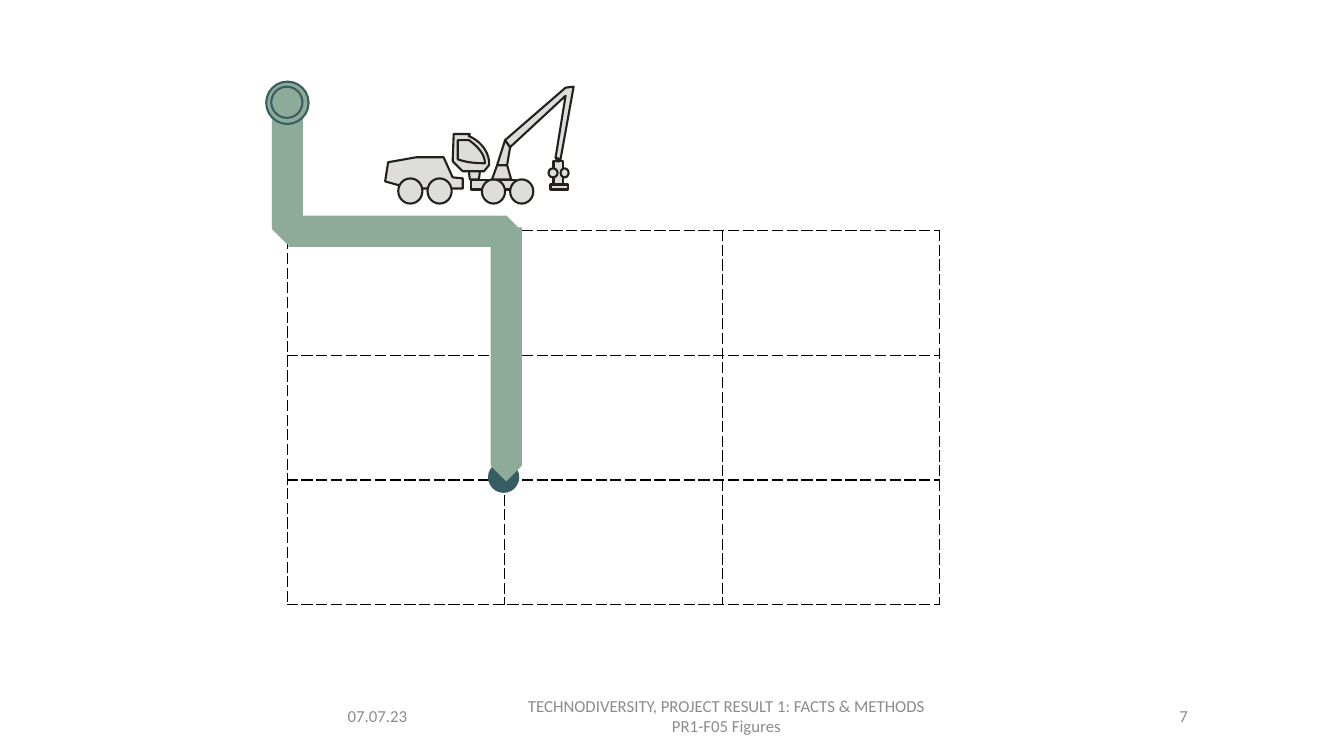
from lxml import etree
from pptx import Presentation
from pptx.dml.color import RGBColor
from pptx.enum.shapes import MSO_SHAPE
from pptx.enum.text import MSO_ANCHOR, PP_ALIGN
from pptx.oxml.ns import qn
from pptx.util import Inches, Pt

OVAL, RECTANGLE, PENTAGON = MSO_SHAPE.OVAL, MSO_SHAPE.RECTANGLE, MSO_SHAPE.PENTAGON
LEFT, CENTER, RIGHT = PP_ALIGN.LEFT, PP_ALIGN.CENTER, PP_ALIGN.RIGHT
MIDDLE = MSO_ANCHOR.MIDDLE

THEME = {
    "font": "Calibri",
    "footer_size": 12,
    "footer": "8C8C8C",
    "grid": "000000",
    "grid_width": 1,
    "target": "355D62",
    "route": "8EAB99",
    "ring": "395D61",
    "machine": "DDDDDC",
    "outline": "24211D",
    "outline_width": 1.5,
}
NO_STYLE = "{2D5ABB26-0587-4C30-8999-92F81FD0307C}"
CURVE_STEPS = 12

FOOTERS = [
    ((3.35, 6.9, 1.34, 0.4), LEFT, ["07.07.23"]),
    ((4.86, 6.9, 4.69, 0.4), CENTER,
     ["TECHNODIVERSITY, PROJECT RESULT 1: FACTS & METHODS", "PR1-F05 Figures"]),
    ((9.77, 6.9, 2.11, 0.4), RIGHT, ["7"]),
]
GRID_BOX = (2.85, 1.05, 6.47, 4.95)
GRID_ROWS, GRID_COLUMNS = 4, 3
TARGET = (4.84, 4.58, 0.31, 0.31)
ROUTE = [
    ((3.76, 3.36, 2.52, 0.31), 90),
    ((2.86, 2.14, 2.32, 0.31), 0),
    ((2.18, 1.6, 1.34, 0.31), 90),
]
START_RINGS = [(2.64, 0.81, 0.42, 0.42), (2.69, 0.86, 0.31, 0.31)]

# Six-number entries are cubic curves: two control points and an end point.
CHASSIS = (RECTANGLE, (4.67, 1.79, 0.45, 0.09))
FRONT_WHEELS = [(OVAL, (left, 1.78, 0.23, 0.24)) for left in (5.06, 4.78)]
REAR_WHEELS = [(OVAL, (left, 1.77, 0.24, 0.25)) for left in (3.95, 4.24)]
GRAPPLE = [
    (RECTANGLE, (5.49, 1.6, 0.09, 0.23)),
    (OVAL, (5.56, 1.67, 0.08, 0.09)),
    (OVAL, (5.44, 1.67, 0.09, 0.09)),
    (RECTANGLE, (5.46, 1.83, 0.17, 0.05)),
]
BODY = [
    [(4.59, 1.77), (4.59, 1.87), (4.07, 1.87), (3.82, 1.8), (3.85, 1.61),
     (4.13, 1.56), (4.4, 1.56), (4.49, 1.76)],
    [(4.65, 1.35), (4.66, 1.33), (4.5, 1.33), (4.49, 1.6), (4.59, 1.7),
     (4.8, 1.7), (4.85, 1.64), (4.86, 1.56, 4.81, 1.42, 4.65, 1.35)],
    [(4.65, 1.39), (4.75, 1.46, 4.81, 1.54, 4.81, 1.62),
     (4.7, 1.62, 4.62, 1.61, 4.54, 1.58), (4.54, 1.39)],
    [(5.06, 1.46), (5.03, 1.64), (4.93, 1.64), (5.01, 1.39)],
    [(4.88, 1.78), (4.93, 1.64), (5.03, 1.64), (5.07, 1.78)],
    [(4.76, 1.7), (4.65, 1.7), (4.66, 1.78), (4.75, 1.78)],
    [(5.01, 1.39), (5.61, 0.87), (5.69, 0.86), (5.56, 1.58), (5.51, 1.57),
     (5.61, 0.95), (5.06, 1.46)],
]
PIN = [(5.53, 1.57), (5.52, 1.58), (5.52, 1.6), (5.53, 1.6), (5.55, 1.6), (5.55, 1.58)]


def color(name):
    return RGBColor.from_string(THEME[name])


def paint(shape, fill=None, line=None):
    shape.shadow.inherit = False
    if fill:
        shape.fill.solid()
        shape.fill.fore_color.rgb = color(fill)
    else:
        shape.fill.background()
    if line:
        shape.line.color.rgb = color(line)
        shape.line.width = Pt(THEME["outline_width"])
    else:
        shape.line.fill.background()


def add_preset(shapes, kind, box, fill, line=None, rotation=0):
    shape = shapes.add_shape(kind, *map(Inches, box))
    shape.rotation = rotation
    paint(shape, fill, line)


def flatten(outline):
    points = [outline[0]]
    for step in outline[1:]:
        if len(step) == 2:
            points.append(step)
            continue
        start, first, second, end = points[-1], step[:2], step[2:4], step[4:]
        for index in range(1, CURVE_STEPS + 1):
            t = index / CURVE_STEPS
            u = 1 - t
            points.append(tuple(
                u**3 * a + 3 * u**2 * t * b + 3 * u * t**2 * c + t**3 * d
                for a, b, c, d in zip(start, first, second, end)))
    return points


def add_outline(shapes, outline, fill):
    points = [(Inches(x), Inches(y)) for x, y in flatten(outline)]
    builder = shapes.build_freeform(*points[0])
    builder.add_line_segments(points[1:], close=True)
    paint(builder.convert_to_shape(), fill, "outline")


def add_footer(slide, box, alignment, lines):
    frame = slide.shapes.add_textbox(*map(Inches, box)).text_frame
    frame.word_wrap = True
    frame.vertical_anchor = MIDDLE
    frame.text = "\n".join(lines)
    font_format = {"name": THEME["font"], "size": Pt(THEME["footer_size"])}
    for paragraph in frame.paragraphs:
        paragraph.alignment = alignment
        for name, value in font_format.items():
            setattr(paragraph.font, name, value)
        paragraph.font.color.rgb = color("footer")


def add_border(cell, side):
    properties = cell._tc.get_or_add_tcPr()
    line = etree.SubElement(properties, qn(f"a:ln{side}"), w=str(Pt(THEME["grid_width"])))
    fill = etree.SubElement(line, qn("a:solidFill"))
    etree.SubElement(fill, qn("a:srgbClr"), val=THEME["grid"])
    etree.SubElement(line, qn("a:prstDash"), val="dash")


def add_grid(slide):
    frame = slide.shapes.add_table(GRID_ROWS, GRID_COLUMNS, *map(Inches, GRID_BOX))
    table = frame.table
    table.first_row = table.horz_banding = False
    table._tbl.tblPr.find(qn("a:tableStyleId")).text = NO_STYLE
    for row in range(GRID_ROWS):
        for column in range(GRID_COLUMNS):
            cell = table.cell(row, column)
            sides = "LRTB" if row else "LB" if column == 0 else "B"
            for side in sides:
                add_border(cell, side)
            cell.fill.background()


def add_machine(slide):
    shapes = slide.shapes.add_group_shape().shapes
    for kind, box in [CHASSIS, *FRONT_WHEELS]:
        add_preset(shapes, kind, box, "machine", "outline")
    for outline in BODY:
        add_outline(shapes, outline, "machine")
    for kind, box in REAR_WHEELS + GRAPPLE:
        add_preset(shapes, kind, box, "machine", "outline")
    add_outline(shapes, PIN, None)


def main():
    presentation = Presentation()
    presentation.slide_width = Inches(13.33)
    presentation.slide_height = Inches(7.5)
    slide = presentation.slides.add_slide(presentation.slide_layouts[6])
    for footer in FOOTERS:
        add_footer(slide, *footer)
    add_grid(slide)
    add_preset(slide.shapes, OVAL, TARGET, "target")
    for box, rotation in ROUTE:
        add_preset(slide.shapes, PENTAGON, box, "route", rotation=rotation)
    start = slide.shapes.add_group_shape()
    for box in START_RINGS:
        add_preset(start.shapes, OVAL, box, "route", "ring")
    add_machine(slide)
    presentation.save("out.pptx")


if __name__ == "__main__":
    main()
